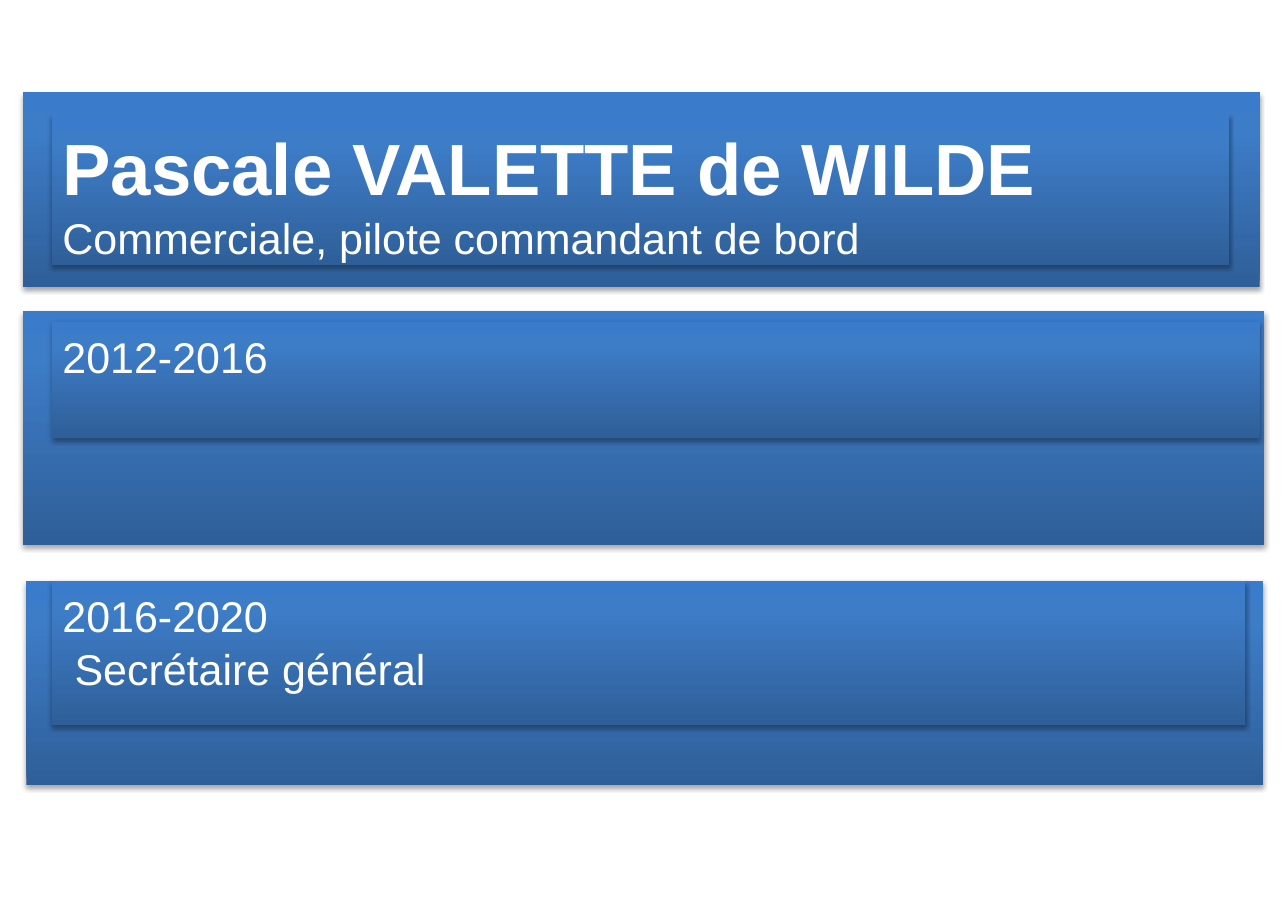
import copy
import dataclasses

import pptx
import pptx.dml.color
import pptx.enum.shapes
import pptx.enum.text
import pptx.oxml
import pptx.oxml.ns
import pptx.util
from pptx.util import Cm


@dataclasses.dataclass(frozen=True)
class Theme:
    font: str = "Arial"
    text: str = "FFFFFF"
    name_size: float = 47.4
    body_size: float = 28.1
    # Gradient stops, from bottom to top
    gradient: tuple = ((0, "2F5F99"), (0.8, "3D7CC7"), (1, "3A7CCB"))


THEME = Theme()
SHADOW = (
    f'<a:outerShdw {pptx.oxml.ns.nsdecls("a")} blurRad="{pptx.util.Pt(3.1)}" '
    f'dist="{pptx.util.Pt(1.8)}" dir="5400000" rotWithShape="0">'
    '<a:srgbClr val="000000"><a:alpha val="35000"/></a:srgbClr></a:outerShdw>'
)


def write_text(paragraph, text, size=THEME.body_size, bold=False, indent=0, space_before=0):
    if indent:
        paragraph._p.get_or_add_pPr().set("marL", str(int(indent)))
    paragraph.alignment = pptx.enum.text.PP_ALIGN.LEFT
    paragraph.space_before = pptx.util.Pt(space_before)
    run = paragraph.add_run()
    run.text = text
    run.font.name = THEME.font
    run.font.size = pptx.util.Pt(size)
    run.font.bold = bold
    run.font.color.rgb = pptx.dml.color.RGBColor.from_string(THEME.text)


class SlideBuilder:
    def __init__(self, slide, theme):
        self.slide = slide
        self.theme = theme

    def panel(self, left, top, width, height):
        """Add a gradient rectangle with a soft shadow below it."""
        shape = self.slide.shapes.add_shape(
            pptx.enum.shapes.MSO_SHAPE.RECTANGLE, Cm(left), Cm(top), Cm(width), Cm(height))
        shape.fill.gradient()
        shape.fill.gradient_angle = 90
        stop_list = shape._element.spPr.find(".//" + pptx.oxml.ns.qn("a:gsLst"))
        stop_list.append(copy.deepcopy(stop_list[-1]))
        for stop, (position, color) in zip(shape.fill.gradient_stops, self.theme.gradient):
            stop.position = position
            stop.color.rgb = pptx.dml.color.RGBColor.from_string(color)
        shape.line.fill.background()
        shape.shadow.inherit = False
        effects = shape._element.spPr.find(pptx.oxml.ns.qn("a:effectLst"))
        effects.append(pptx.oxml.parse_xml(SHADOW))
        return shape

    def text_panel(self, left, top, width, height, lines):
        """Add a panel holding one paragraph per (text, format) pair."""
        frame = self.panel(left, top, width, height).text_frame
        frame.word_wrap = True
        frame.vertical_anchor = pptx.enum.text.MSO_ANCHOR.TOP
        frame.margin_left = frame.margin_right = Cm(0.25)
        frame.margin_top = frame.margin_bottom = Cm(0.2)
        for index, (text, text_format) in enumerate(lines):
            paragraph = frame.add_paragraph() if index else frame.paragraphs[0]
            write_text(paragraph, text, **text_format)


def main():
    presentation = pptx.Presentation()
    presentation.slide_width = Cm(29.7)
    presentation.slide_height = Cm(20.98)
    slide = presentation.slides.add_slide(presentation.slide_layouts[6])
    builder = SlideBuilder(slide, THEME)

    # Background bands
    builder.panel(0.53, 2.13, 28.52, 4.5)
    builder.panel(0.53, 7.16, 28.63, 5.41)
    builder.panel(0.61, 13.39, 28.52, 4.72)

    # Name and occupation
    text_left = 1.19
    builder.text_panel(text_left, 2.64, 27.15, 3.48, [
        ("Pascale VALETTE de WILDE", {"size": THEME.name_size, "bold": True}),
        ("Commerciale, pilote commandant de bord", {"space_before": 1}),
    ])

    # Terms of office
    builder.text_panel(text_left, 7.42, 27.86, 2.67, [("2012-2016", {})])
    builder.text_panel(text_left, 13.39, 27.53, 3.33, [
        ("2016-2020", {}),
        ("Secrétaire général", {"indent": Cm(0.28), "space_before": 1}),
    ])

    presentation.save("out.pptx")


if __name__ == "__main__":
    main()
